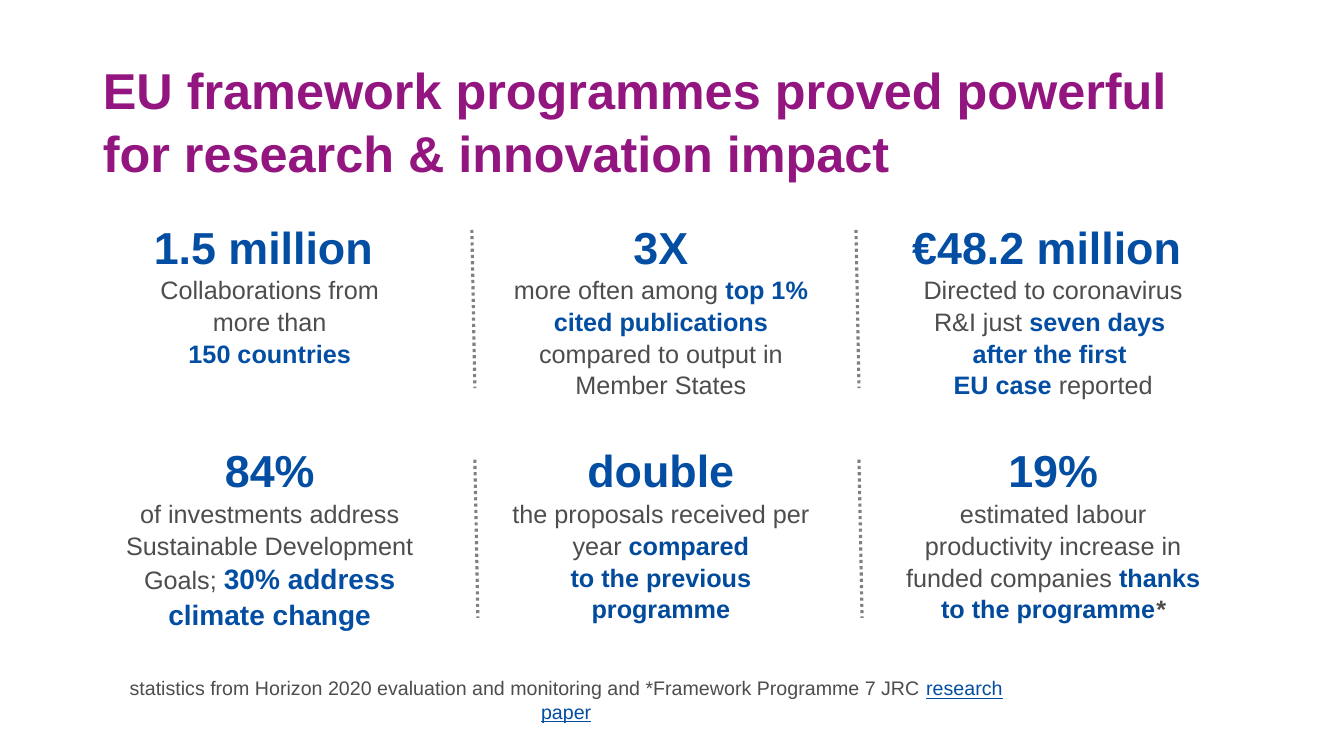
from lxml.etree import SubElement
from pptx import Presentation
from pptx.dml.color import RGBColor
from pptx.enum.dml import MSO_LINE
from pptx.enum.shapes import MSO_CONNECTOR
from pptx.enum.text import MSO_ANCHOR, MSO_AUTO_SIZE, PP_ALIGN
from pptx.oxml.ns import qn
from pptx.util import Pt

PX = 9144
COLORS = {"title": "931680", "blue": "034EA2", "deep": "024B9C", "grey": "4D4D4D", "rule": "808080"}

STATS = [
    [
        ("1.5 million ", [("Collaborations from\n more than \n", "grey", 18, ""),
                          ("150 countries", "blue", 18, "b")]),
        ("3X", [("more often among ", "grey", 18, ""),
                ("top 1% cited publications ", "blue", 18, "b"),
                ("compared to output in Member States", "grey", 18, "")]),
        ("€48.2 million ", [("Directed to coronavirus R&I just ", "grey", 18, ""),
                            ("seven days \nafter the first \nEU case ", "blue", 18, "b"),
                            ("reported", "grey", 18, "")]),
    ],
    [
        ("84%", [("of investments address Sustainable Development Goals; ", "grey", 18, ""),
                 ("30% address climate change", "blue", 20, "b")]),
        ("double", [("the proposals received per year ", "grey", 18, ""),
                    ("compared\nto the previous programme", "deep", 18, "b")]),
        ("19%", [("estimated labour productivity increase in funded companies ", "grey", 18, ""),
                 ("thanks to the programme", "deep", 18, "b"),
                 ("*", "grey", 18, "bi")]),
    ],
]
NOTE = [
    ("statistics from Horizon 2020 evaluation and monitoring and *Framework Programme 7 JRC ", "grey", 14, ""),
    ("research paper", "blue", 14, "u"),
]


def color(name):
    """Return the named colour."""
    return RGBColor.from_string(COLORS[name])


def style(font, name, size, flags):
    """Format a font; flags holds b, i and u for bold, italic and underline."""
    font.name = "Arial"
    font.size = Pt(size)
    font.color.rgb = color(name)
    font.bold = "b" in flags
    font.italic = "i" in flags
    font.underline = "u" in flags


def add_runs(p, runs):
    """Add styled runs to a paragraph, with a line break at each newline."""
    for text, *look in runs:
        for i, part in enumerate(text.split("\n")):
            if i:
                p.add_line_break()
            r = p.add_run()
            r.text = part
            style(r.font, *look)


def add_text(s, x, y, w, h, paragraphs, spacing):
    """Add a wrapped, centred text box."""
    tf = s.shapes.add_textbox(x * PX, y * PX, w * PX, h * PX).text_frame
    tf.word_wrap = True
    for i, runs in enumerate(paragraphs):
        p = tf.add_paragraph() if i else tf.paragraphs[0]
        p.alignment = PP_ALIGN.CENTER
        p.line_spacing = spacing
        add_runs(p, runs)


def add_title(s, x, y, w, h):
    """Place and format the title."""
    title = s.shapes.title
    title.left, title.top, title.width, title.height = x * PX, y * PX, w * PX, h * PX
    tf = title.text_frame
    tf.word_wrap = True
    tf.auto_size = MSO_AUTO_SIZE.NONE
    tf.vertical_anchor = MSO_ANCHOR.TOP
    tf.margin_bottom = 0
    tf.text = "EU framework programmes proved powerful\vfor research & innovation impact"
    p = tf.paragraphs[0]
    p.alignment = PP_ALIGN.LEFT
    p.line_spacing = 1.04
    for r in p.runs:
        style(r.font, "title", 36, "b")


def add_divider(s, x, y, w, h):
    """Add a dotted line across the given narrow box."""
    line = s.shapes.add_connector(MSO_CONNECTOR.STRAIGHT, x * PX, y * PX, (x + w) * PX, (y + h) * PX)
    line.line.color.rgb = color("rule")
    line.line.width = Pt(2.25)
    line.line.dash_style = MSO_LINE.ROUND_DOT
    SubElement(line._element.spPr, qn("a:effectLst"))


def add_stats(s, x, y, w, h):
    """Add the grid of figures with dividers between the columns."""
    cell_w, cell_h = 315, 193
    for row, stats in enumerate(STATS):
        top = y + row * (h - cell_h)
        for col, (figure, text) in enumerate(stats):
            left = x + col * (w - cell_w) // 2
            add_text(s, left, top, cell_w, cell_h, [[(figure, "blue", 32, "b")], text], 1.05)
        for col in range(2):
            add_divider(s, x + 358 + 381 * col + 3 * row, y + 18 + 228 * row, 3, 157)


def main():
    """Build and save the slide."""
    prs = Presentation()
    prs.slide_width, prs.slide_height = 1333 * PX, 750 * PX
    s = prs.slides.add_slide(prs.slide_layouts[5])
    add_title(s, 92, 51, 1111, 152)
    add_stats(s, 110, 210, 1092, 415)
    add_text(s, 92, 666, 939, 34, [NOTE], 1.0)
    prs.save("out.pptx")


if __name__ == "__main__":
    main()
